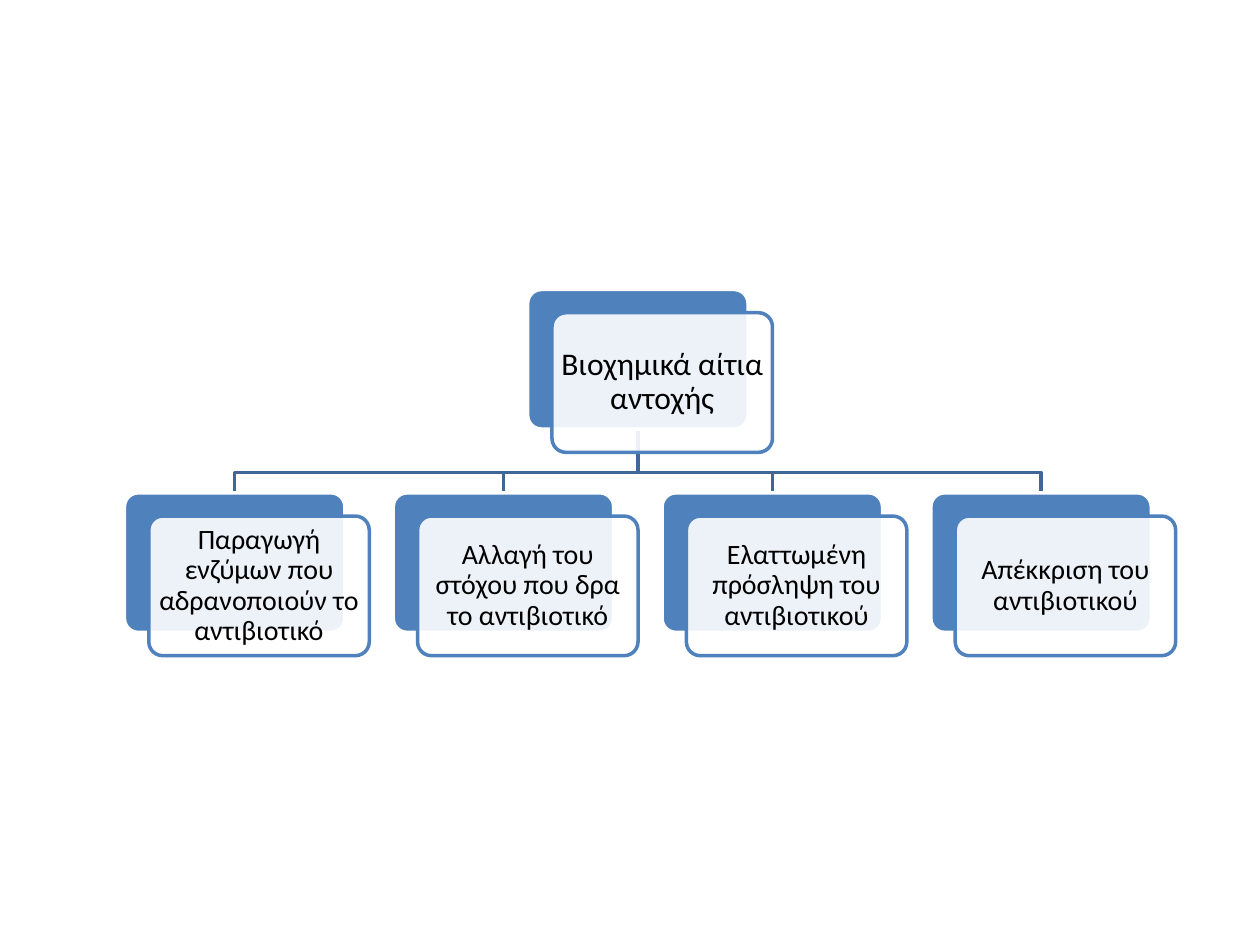
from dataclasses import dataclass

from lxml import etree
from pptx import Presentation
from pptx.dml.color import RGBColor
from pptx.enum import shapes, text
from pptx.oxml import ns
from pptx.util import Pt

BLUE = RGBColor(0x4F, 0x81, 0xBD)
DARK_BLUE = RGBColor(0x3F, 0x67, 0x97)
WHITE = RGBColor(0xFF, 0xFF, 0xFF)
BLACK = RGBColor(0x00, 0x00, 0x00)

NODE_WIDTH, NODE_HEIGHT = 126, 79.8
CARD_DX, CARD_DY = 13.9, 13.3
CAUSE_LEFT, CAUSE_TOP, CAUSE_STEP = 71.1, 281.6, 153.6
ROOT_TOP = 165.4
BRANCH_Y = 270

ROOT_LABEL = "Βιοχημικά αίτια αντοχής"
CAUSE_LABELS = [
    "Παραγωγή ενζύμων που αδρανοποιούν το αντιβιοτικό",
    "Αλλαγή του στόχου που δρα το αντιβιοτικό",
    "Ελαττωμένη πρόσληψη του αντιβιοτικού",
    "Απέκκριση του αντιβιοτικού",
]


@dataclass
class Node:
    label: str
    left: float
    top: float
    font_size: int

    @property
    def center(self) -> float:
        return self.left + NODE_WIDTH / 2

    @property
    def bottom(self) -> float:
        return self.top + NODE_HEIGHT


def draw_branch(slide, parent: Node, child: Node) -> None:
    builder = slide.shapes.build_freeform(
        Pt(parent.center), Pt(parent.bottom), scale=1.0
    )
    corners = [
        (parent.center, BRANCH_Y),
        (child.center, BRANCH_Y),
        (child.center, child.top),
    ]
    builder.add_line_segments([(Pt(x), Pt(y)) for x, y in corners], close=False)
    branch = builder.convert_to_shape()
    branch.shadow.inherit = False
    branch.fill.background()
    branch.line.color.rgb = DARK_BLUE
    branch.line.width = Pt(2)


def draw_panel(slide, left: float, top: float, fill: RGBColor, line: RGBColor):
    panel = slide.shapes.add_shape(
        shapes.MSO_SHAPE.ROUNDED_RECTANGLE,
        Pt(left), Pt(top), Pt(NODE_WIDTH), Pt(NODE_HEIGHT),
    )
    panel.adjustments[0] = 0.1
    panel.shadow.inherit = False
    panel.fill.solid()
    panel.fill.fore_color.rgb = fill
    panel.line.color.rgb = line
    panel.line.width = Pt(2)
    return panel


def set_opacity(panel, percent: int) -> None:
    color = panel._element.spPr.find(ns.qn("a:solidFill")).find(ns.qn("a:srgbClr"))
    etree.SubElement(color, ns.qn("a:alpha"), val=str(percent * 1000))


def write_label(card, label: str, font_size: int) -> None:
    frame = card.text_frame
    frame.text = label
    frame.word_wrap = True
    frame.vertical_anchor = text.MSO_ANCHOR.MIDDLE
    frame.margin_left = frame.margin_right = Pt(2.7)
    frame.margin_top = frame.margin_bottom = Pt(2.7)
    paragraph = frame.paragraphs[0]
    paragraph.alignment = text.PP_ALIGN.CENTER
    paragraph.line_spacing = 0.9
    font = paragraph.runs[0].font
    font.name = "Calibri"
    font.size = Pt(font_size)
    font.color.rgb = BLACK


def draw_node(slide, node: Node) -> None:
    draw_panel(slide, node.left, node.top, BLUE, WHITE)
    card = draw_panel(slide, node.left + CARD_DX, node.top + CARD_DY, WHITE, BLUE)
    set_opacity(card, 90)
    write_label(card, node.label, node.font_size)


def main() -> None:
    presentation = Presentation()
    presentation.slide_width = Pt(720)
    presentation.slide_height = Pt(540)
    slide = presentation.slides.add_slide(presentation.slide_layouts[6])

    causes = [
        Node(label, CAUSE_LEFT + index * CAUSE_STEP, CAUSE_TOP, 16)
        for index, label in enumerate(CAUSE_LABELS)
    ]
    root_left = (causes[0].left + causes[-1].left) / 2
    root = Node(ROOT_LABEL, root_left, ROOT_TOP, 18)

    for cause in reversed(causes):
        draw_branch(slide, root, cause)
    for node in [root, *causes]:
        draw_node(slide, node)

    presentation.save("out.pptx")


if __name__ == "__main__":
    main()
